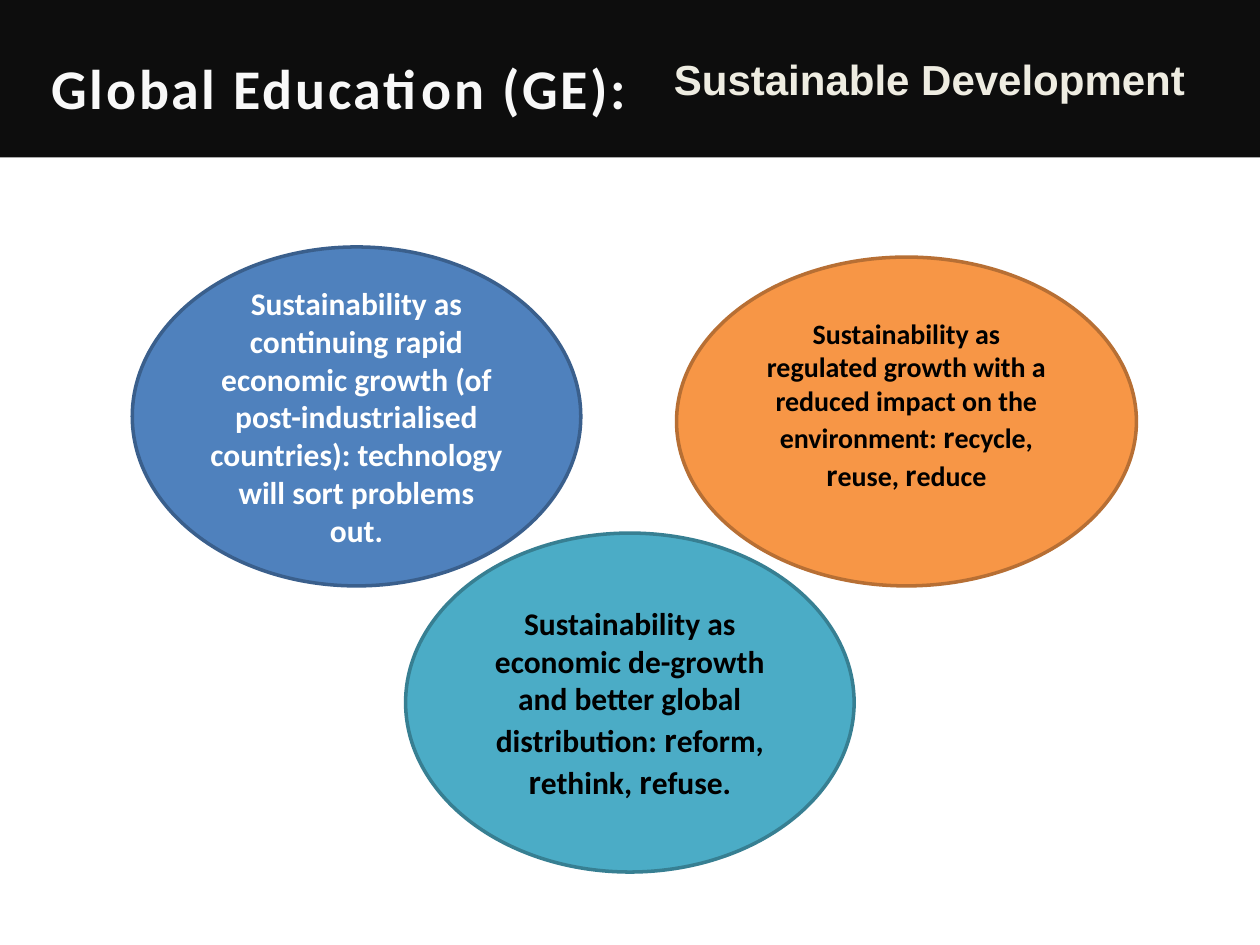
from pptx import Presentation
from pptx.dml.color import RGBColor
from pptx.enum import shapes, text
from pptx.util import Pt

# Content: runs are (words, size); boxes are (left, top, width, height) in points
TITLE = [("Global Education (GE):", 32)]
SUBTITLE = [("Sustainable Development", 24)]


def enlarged_r(intro, endings, size):
    """Runs in which each ending starts with an r two points larger."""
    runs = [(intro, size)]
    for ending in endings:
        runs += [("r", size + 2), (ending, size)]
    return runs


VIEWS = [
    dict(box=(75.6, 141.1, 256.3, 193.7), fill="4F81BD", line="3A5F8C",
         color="FFFFFF", bottom=3.6,
         runs=[("Sustainability as continuing rapid economic growth (of "
                "post-industrialised countries): technology will sort "
                "problems out.", 18)]),
    dict(box=(386.6, 146.9, 262.8, 187.9), fill="F79646", line="B76F34",
         color="000000", bottom=23,
         runs=enlarged_r("Sustainability as regulated growth with a reduced "
                         "impact on the environment: ",
                         ["ecycle, ", "euse, ", "educe"], 16)),
    dict(box=(231.8, 304.6, 256.3, 193.7), fill="4BACC6", line="377F92",
         color="000000", bottom=3.6,
         runs=enlarged_r("Sustainability as economic de-growth and better "
                         "global distribution: ",
                         ["eform, ", "ethink, ", "efuse."], 18)),
]


def rgb(value):
    return RGBColor.from_string(value)


def points(box):
    return [Pt(length) for length in box]


def write(shape, runs, color, font="Calibri", align=text.PP_ALIGN.CENTER,
          anchor=text.MSO_ANCHOR.MIDDLE, top=3.6, bottom=3.6, tracking=0):
    frame = shape.text_frame
    frame.word_wrap = True
    frame.auto_size = text.MSO_AUTO_SIZE.NONE
    frame.vertical_anchor = anchor
    frame.margin_top, frame.margin_bottom = Pt(top), Pt(bottom)
    paragraph = frame.paragraphs[0]
    paragraph.alignment = align
    for words, size in runs:
        run = paragraph.add_run()
        run.text = words
        run.font.name, run.font.size, run.font.bold = font, Pt(size), True
        run.font.color.rgb = rgb(color)
        if tracking:
            run.font._element.set("spc", str(int(tracking * 100)))


def add_filled(slide, kind, box, fill, line=None):
    shape = slide.shapes.add_shape(kind, *points(box))
    shape.shadow.inherit = False
    shape.fill.solid()
    shape.fill.fore_color.rgb = rgb(fill)
    if line:
        shape.line.color.rgb = rgb(line)
        shape.line.width = Pt(2)
    else:
        shape.line.fill.background()
    return shape


def main():
    deck = Presentation()
    deck.slide_width, deck.slide_height = Pt(720), Pt(540)
    slide = deck.slides.add_slide(deck.slide_layouts[5])

    # Header band, placed behind the title
    band = add_filled(slide, shapes.MSO_SHAPE.RECTANGLE, (0, 0, 720, 90), "0D0D0D")
    slide.shapes._spTree.insert(2, band._element)

    # Title and subtitle
    title = slide.shapes.title
    title.left, title.top, title.width, title.height = points((0, 0, 388, 142.6))
    write(title, TITLE, "F8F8F8", bottom=47, tracking=1.5)
    subtitle = slide.shapes.add_textbox(*points((378, 23.8, 323.3, 36)))
    write(subtitle, SUBTITLE, "EEECE1", font="Arial", top=7,
          align=text.PP_ALIGN.LEFT, anchor=text.MSO_ANCHOR.TOP)

    # Three views of sustainability
    for view in VIEWS:
        ellipse = add_filled(slide, shapes.MSO_SHAPE.OVAL, view["box"],
                             view["fill"], view["line"])
        write(ellipse, view["runs"], view["color"], bottom=view["bottom"])

    deck.save("out.pptx")


if __name__ == "__main__":
    main()
